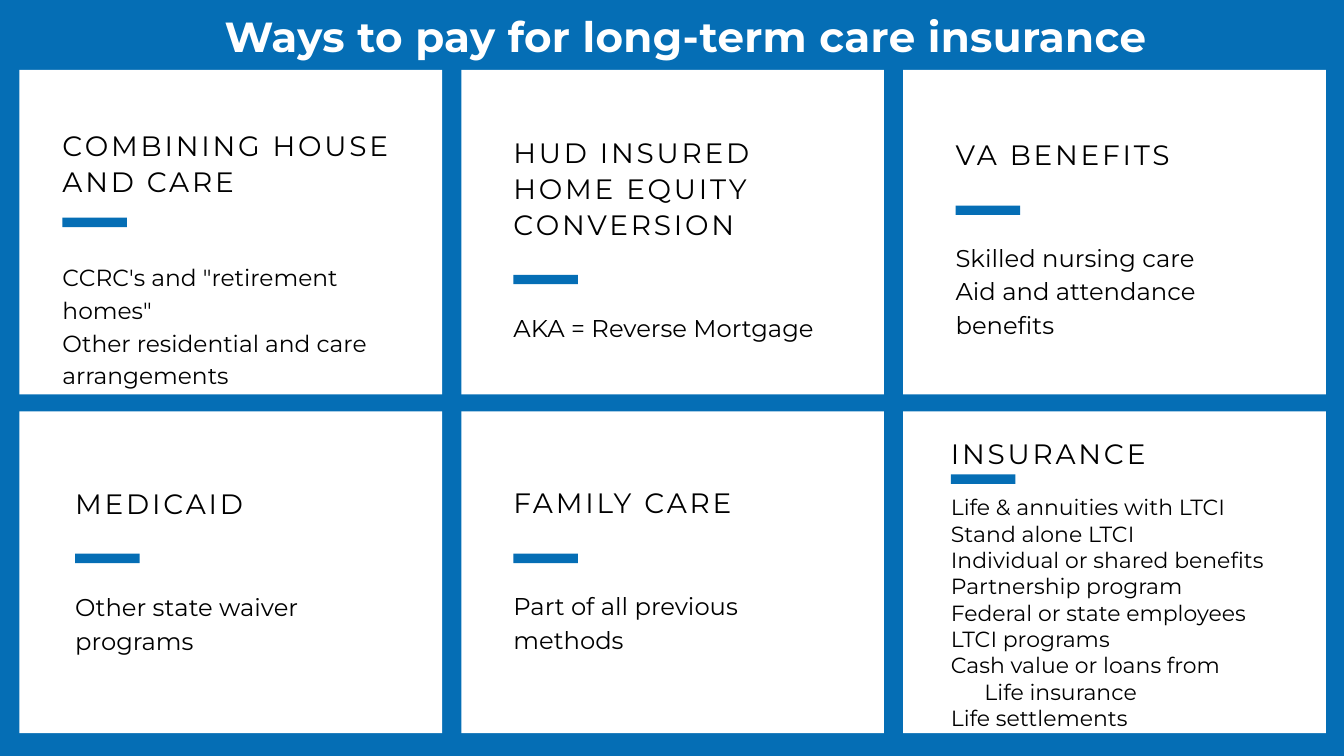
from dataclasses import dataclass

from pptx import Presentation
from pptx.dml.color import RGBColor
from pptx.enum.shapes import MSO_SHAPE
from pptx.enum.text import PP_ALIGN
from pptx.util import Inches, Pt

RECTANGLE = MSO_SHAPE.RECTANGLE
LEFT, CENTER = PP_ALIGN.LEFT, PP_ALIGN.CENTER
WIDTH, HEIGHT = Inches(20), Inches(11.25)
UNIT = WIDTH / 200


@dataclass(frozen=True)
class TextStyle:
    size: float
    leading: float
    color: str = "000000"
    tracking: float = 0
    bold: bool = False
    align: PP_ALIGN = LEFT


@dataclass(frozen=True)
class Theme:
    font: str = "Montserrat"
    blue: str = "056EB5"
    white: str = "FFFFFF"
    title: TextStyle = TextStyle(45, 58.5, "FFFFFF", 0.4, True, CENTER)
    heading: TextStyle = TextStyle(30, 39, tracking=3)
    body: TextStyle = TextStyle(26, 36.4)
    compact: TextStyle = TextStyle(25, 35)
    dense: TextStyle = TextStyle(23.5, 28.2)


@dataclass(frozen=True)
class Box:
    left: float
    top: float
    width: float
    height: float

    def inner(self, left, top, width, height):
        """Return a box placed relative to this one."""
        return Box(self.left + left, self.top + top, width, height)

    def emu(self):
        """Return the box in slide lengths."""
        return [round(n * UNIT) for n in (self.left, self.top, self.width, self.height)]


@dataclass(frozen=True)
class Method:
    heading: str
    details: tuple
    inset: float
    heading_top: float
    bar_top: float
    details_top: float
    heading_lines: int = 1
    detail_lines: int = 2
    heading_width: float = 47.3
    details_width: float = 47.3
    style: TextStyle = Theme.body


THEME = Theme()
CARD_LEFT, CARD_STEP, CARD_WIDTH = 2.9, 65.75, 62.9
CARD_ROWS = ((10.4, 48.3), (61.2, 47.9))
BAR_WIDTH, BAR_HEIGHT = 9.6, 1.4

METHODS = (
    (
        Method("COMBINING HOUSE AND CARE",
               ("CCRC's and \"retirement homes\"",
                "Other residential and care arrangements"),
               6.4, 8.3, 22, 28.1, heading_lines=2, detail_lines=4,
               heading_width=49.3, details_width=55.1, style=THEME.compact),
        Method("HUD INSURED HOME EQUITY CONVERSION",
               ("AKA = Reverse Mortgage",),
               7.75, 9.3, 30.5, 35.5, heading_lines=3, detail_lines=1),
        Method("VA BENEFITS",
               ("Skilled nursing care", "Aid and attendance benefits"),
               7.8, 9.6, 20.2, 25, detail_lines=3),
    ),
    (
        Method("MEDICAID", ("Other state waiver programs",),
               8.3, 10.8, 21.2, 26.2),
        Method("FAMILY CARE", ("Part of all previous methods",),
               7.75, 10.7, 21.2, 26.1),
        Method("INSURANCE",
               ("Life & annuities with LTCI",
                "Stand alone LTCI",
                "Individual or shared benefits",
                "Partnership program",
                "Federal or state employees",
                "LTCI programs",
                "Cash value or loans from\v\tLife insurance",
                "Life settlements"),
               7.1, 3.4, 9.4, 12.3, detail_lines=9,
               details_width=51, style=THEME.dense),
    ),
)


def add_block(slide, box, color):
    """Draw a plain filled rectangle."""
    block = slide.shapes.add_shape(RECTANGLE, *box.emu())
    block.shadow.inherit = False
    block.fill.solid()
    block.fill.fore_color.rgb = RGBColor.from_string(color)
    block.line.fill.background()


def add_copy(slide, box, lines, style):
    """Write one paragraph per line in a borderless text box."""
    frame = slide.shapes.add_textbox(*box.emu()).text_frame
    frame.word_wrap = True
    frame.margin_left = frame.margin_right = frame.margin_top = frame.margin_bottom = 0
    for index, line in enumerate(lines):
        paragraph = frame.add_paragraph() if index else frame.paragraphs[0]
        paragraph.text = line
        paragraph.alignment = style.align
        paragraph.line_spacing = Pt(style.leading)
        for run in paragraph.runs:
            run.font.name = THEME.font
            run.font.size = Pt(style.size)
            run.font.bold = style.bold
            run.font.color.rgb = RGBColor.from_string(style.color)
            if style.tracking:
                run.font._element.set("spc", str(round(style.tracking * 100)))


def text_height(lines, style):
    """Return the height of a number of lines in grid units."""
    return lines * Pt(style.leading) / UNIT


def add_card(slide, card, method):
    """Place a payment method's heading, accent bar and details in its card."""
    add_block(slide, card, THEME.white)
    heading = card.inner(method.inset, method.heading_top, method.heading_width,
                         text_height(method.heading_lines, THEME.heading))
    add_copy(slide, heading, (method.heading,), THEME.heading)
    bar = card.inner(method.inset, method.bar_top, BAR_WIDTH, BAR_HEIGHT)
    add_block(slide, bar, THEME.blue)
    details = card.inner(method.inset, method.details_top, method.details_width,
                         text_height(method.detail_lines, method.style))
    add_copy(slide, details, method.details, method.style)


def add_card_grid(slide):
    """Lay the payment methods out in rows of equal columns."""
    for (top, height), methods in zip(CARD_ROWS, METHODS):
        for column, method in enumerate(methods):
            left = CARD_LEFT + column * CARD_STEP
            add_card(slide, Box(left, top, CARD_WIDTH, height), method)


def main():
    """Build and save the slide."""
    deck = Presentation()
    deck.slide_width, deck.slide_height = WIDTH, HEIGHT
    slide = deck.slides.add_slide(deck.slide_layouts[6])
    slide.background.fill.solid()
    slide.background.fill.fore_color.rgb = RGBColor.from_string(THEME.blue)
    add_card_grid(slide)
    add_copy(slide, Box(26.3, 0.9, 151.5, 8),
             ("Ways to pay for long-term care insurance",), THEME.title)
    deck.save("out.pptx")


if __name__ == "__main__":
    main()
